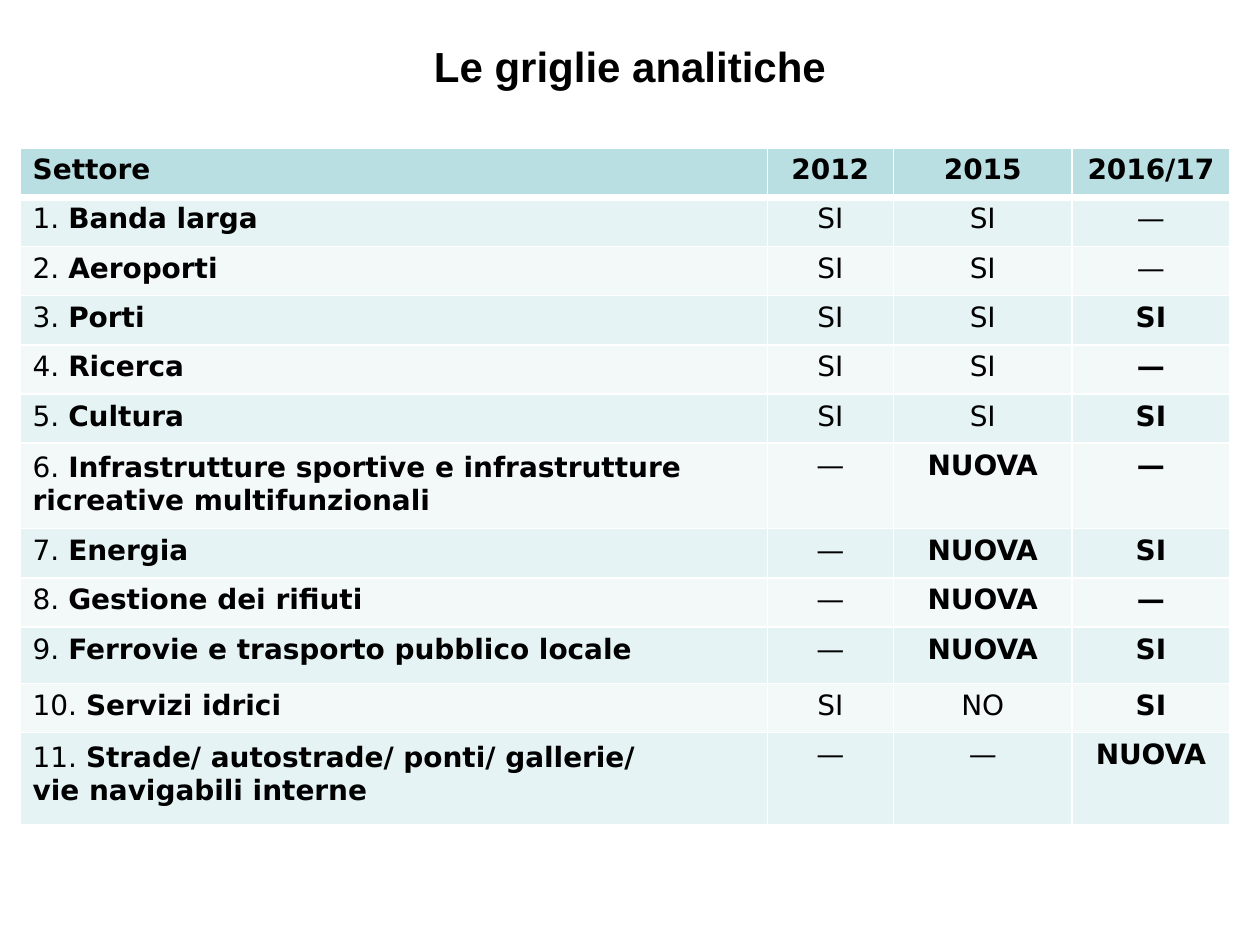
from lxml.etree import SubElement
from pptx import Presentation
from pptx.dml.color import RGBColor
from pptx.enum.text import MSO_ANCHOR, PP_ALIGN
from pptx.oxml.ns import qn
from pptx.util import Inches, Pt

WIDE, HIGH = Inches(10), Inches(7.5)
COLS = [59.3, 10, 14.2, 12.5]
ROWS = [5.2] * 6 + [9.07, 5.2, 5.2, 6, 5.2, 9.73]
HEAD = ["Settore", "2012", "2015", "2016/17"]
BODY = [
    ["Banda larga", "SI", "SI", "—"],
    ["Aeroporti", "SI", "SI", "—"],
    ["Porti", "SI", "SI", "SI"],
    ["Ricerca", "SI", "SI", "—"],
    ["Cultura", "SI", "SI", "SI"],
    ["Infrastrutture sportive e infrastrutture ricreative multifunzionali",
     "—", "NUOVA", "—"],
    ["Energia", "—", "NUOVA", "SI"],
    ["Gestione dei rifiuti", "—", "NUOVA", "—"],
    ["Ferrovie e trasporto pubblico locale", "—", "NUOVA", "SI"],
    ["Servizi idrici", "SI", "NO", "SI"],
    ["Strade/ autostrade/ ponti/ gallerie/\nvie navigabili interne",
     "—", "—", "NUOVA"],
]


def across(share):
    return round(WIDE * share / 100)


def down(share):
    return round(HIGH * share / 100)


def color(code):
    return RGBColor.from_string(code)


def style(para, size, face, bold=None):
    font = para.font
    font.size, font.name, font.bold = Pt(size), face, bold
    font.color.rgb = color("000000")


def inset(box, left, top):
    box.margin_left, box.margin_top = Inches(left), Inches(top)
    box.margin_right = box.margin_bottom = 0


def add_title(slide, text):
    box = slide.shapes.add_textbox(across(8.6), down(4.13), across(82.8), down(5.6))
    frame = box.text_frame
    frame.word_wrap = True
    frame.vertical_anchor = MSO_ANCHOR.MIDDLE
    inset(frame, 0, 0.01)
    para = frame.paragraphs[0]
    para.text, para.alignment = text, PP_ALIGN.CENTER
    para.space_before = Pt(0.9)
    style(para, 24, "Arial", True)


def add_edges(cell, top, base):
    props = cell._tc.get_or_add_tcPr()
    for side, width in zip("LRTB", (1, 1, top, base)):
        line = SubElement(props, qn(f"a:ln{side}"), w=str(Pt(width)))
        fill = SubElement(line, qn("a:solidFill"))
        SubElement(fill, qn("a:srgbClr"), val="FFFFFF")


def paint(cell, row):
    add_edges(cell, 4.25 if row == 1 else 1, 4.25 if row == 0 else 1)
    cell.fill.solid()
    shade = "BADFE2" if row == 0 else ("F3F8F8", "E6F3F4")[row % 2]
    cell.fill.fore_color.rgb = color(shade)


def add_name(cell, row, name):
    paint(cell, row)
    tall = "\n" in name or len(name) > 40
    inset(cell, 0.1, 0.06 if tall else 0.04 if row < 2 else 0.05)
    frame = cell.text_frame
    for rank, text in enumerate(name.split("\n")):
        para = frame.add_paragraph() if rank else frame.paragraphs[0]
        style(para, 16, "DejaVu Sans")
        if tall:
            para.line_spacing = Pt(19)
        if rank == 0:
            para.space_before = Pt(4 if tall else 3.2)
            if row:
                para.add_run().text = f"{row}. "
        run = para.add_run()
        run.text, run.font.bold = text, True


def add_mark(cell, row, text, bold):
    paint(cell, row)
    inset(cell, 0, 0.04 if row < 2 else 0.05)
    para = cell.text_frame.paragraphs[0]
    para.text, para.alignment = text, PP_ALIGN.CENTER
    para.space_before = Pt(3.2)
    style(para, 16, "DejaVu Sans", bold)


def add_grid(slide):
    frame = slide.shapes.add_table(
        len(ROWS), len(COLS), across(1.6), down(15.7),
        across(sum(COLS)), down(sum(ROWS)))
    table = frame.table
    for col, share in zip(table.columns, COLS):
        col.width = across(share)
    for row, share in zip(table.rows, ROWS):
        row.height = down(share)
    for row, (name, *marks) in enumerate([HEAD] + BODY):
        add_name(table.cell(row, 0), row, name)
        for col, text in enumerate(marks, 1):
            bold = row == 0 or text == "NUOVA" or (col == 3 and row > 2)
            add_mark(table.cell(row, col), row, text, bold)


def main():
    deck = Presentation()
    deck.slide_width, deck.slide_height = WIDE, HIGH
    slide = deck.slides.add_slide(deck.slide_layouts[6])
    add_title(slide, "Le griglie analitiche")
    add_grid(slide)
    deck.save("out.pptx")


if __name__ == "__main__":
    main()
